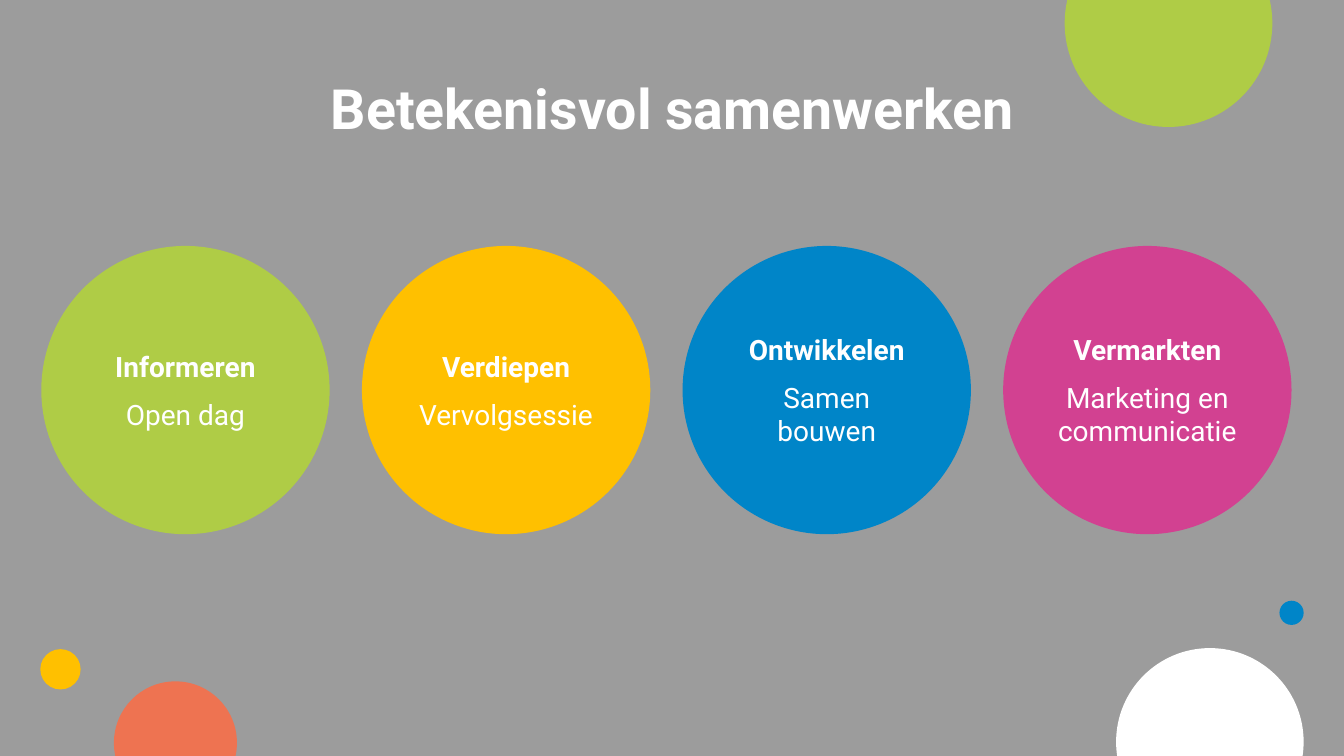
from math import asin, cos, pi, sin, tan

from lxml import etree
from pptx import Presentation
from pptx.dml.color import RGBColor
from pptx.enum.shapes import MSO_SHAPE
from pptx.enum.text import MSO_ANCHOR, PP_ALIGN
from pptx.oxml.ns import qn
from pptx.util import Inches, Pt

GREY = RGBColor(0x9C, 0x9C, 0x9C)
WHITE = RGBColor(0xFF, 0xFF, 0xFF)
GREEN = RGBColor(0xAF, 0xCC, 0x46)
YELLOW = RGBColor(0xFF, 0xC0, 0x00)
BLUE = RGBColor(0x00, 0x85, 0xC8)
PINK = RGBColor(0xD2, 0x41, 0x91)
ORANGE = RGBColor(0xEE, 0x73, 0x51)

WIDTH, HEIGHT = 13.33, 7.5
TITLE = "Betekenisvol samenwerken"
STEPS = [
    ("Informeren", "Open dag", GREEN),
    ("Verdiepen", "Vervolgsessie", YELLOW),
    ("Ontwikkelen", "Samen bouwen", BLUE),
    ("Vermarkten", "Marketing en communicatie", PINK),
]
STEP_LEFT, STEP_TOP, STEP_SIZE, STEP_PITCH = 0.41, 2.44, 2.86, 3.18
# left, top, diameter, colour
DOTS = [(0.4, 6.44, 0.4, YELLOW), (12.69, 5.96, 0.24, BLUE)]
# centre x, centre y, radius, slide edge that cuts the circle, colour
CUT_CIRCLES = [
    (12, 7.36, 0.93, HEIGHT, WHITE),
    (1.74, 7.37, 0.61, HEIGHT, ORANGE),
    (11.59, 0.23, 1.03, 0, GREEN),
]


def paint(shape, color):
    shape.fill.solid()
    shape.fill.fore_color.rgb = color
    shape.line.fill.background()
    shape.shadow.inherit = False


def add_circle(s, left, top, size, color):
    circle = s.shapes.add_shape(MSO_SHAPE.OVAL, Inches(left), Inches(top),
                                Inches(size), Inches(size))
    paint(circle, color)
    return circle


def lines_to_curves(shape):
    """Turn every three line segments of a freeform into one Bezier curve."""
    lines = list(shape.element.iter(qn("a:lnTo")))
    for i in range(0, len(lines) - 2, 3):
        curve = etree.Element(qn("a:cubicBezTo"))
        lines[i].addprevious(curve)
        for line in lines[i:i + 3]:
            curve.append(line[0])
            line.getparent().remove(line)


def add_cut_circle(s, cx, cy, radius, edge, color):
    """Draw the part of a circle that lies within the slide's top or bottom edge."""
    cut = abs(asin((edge - cy) / radius))
    base = 0 if edge == 0 else pi
    stops = [base + a for a in (-cut, 0, pi / 2, pi, pi + cut)]

    def point(angle, pull=0):
        """Point on the circle, moved along its tangent by pull radii."""
        return (Inches(cx + radius * (cos(angle) - pull * sin(angle))),
                Inches(cy + radius * (sin(angle) + pull * cos(angle))))

    points = []
    for a, b in zip(stops, stops[1:]):
        pull = 4 / 3 * tan((b - a) / 4)
        points += [point(a, pull), point(b, -pull), point(b)]
    builder = s.shapes.build_freeform(*point(stops[0]))
    builder.add_line_segments(points, close=True)
    shape = builder.convert_to_shape()
    lines_to_curves(shape)
    paint(shape, color)


def write(p, text, size=20, bold=False, before=0, spacing=1.0):
    p.alignment = PP_ALIGN.CENTER
    p.space_before = Pt(before)
    p.line_spacing = spacing
    r = p.add_run()
    r.text = text
    r.font.name = "Roboto"
    r.font.size = Pt(size)
    r.font.bold = bold
    r.font.color.rgb = WHITE


def main():
    prs = Presentation()
    prs.slide_width, prs.slide_height = Inches(WIDTH), Inches(HEIGHT)
    s = prs.slides.add_slide(prs.slide_layouts[6])
    s.background.fill.solid()
    s.background.fill.fore_color.rgb = GREY

    for cut_circle in CUT_CIRCLES:
        add_cut_circle(s, *cut_circle)
    for dot in DOTS:
        add_circle(s, *dot)

    title = s.shapes.add_textbox(Inches(1.84), Inches(0.76), Inches(9.66), Inches(0.69))
    tf = title.text_frame
    tf.word_wrap = True
    tf.vertical_anchor = MSO_ANCHOR.MIDDLE
    write(tf.paragraphs[0], TITLE, size=39.6, bold=True, spacing=0.9)

    for i, (name, detail, color) in enumerate(STEPS):
        step = add_circle(s, STEP_LEFT + i * STEP_PITCH, STEP_TOP, STEP_SIZE, color)
        tf = step.text_frame
        tf.word_wrap = True
        tf.vertical_anchor = MSO_ANCHOR.MIDDLE
        write(tf.paragraphs[0], name, bold=True)
        write(tf.add_paragraph(), detail, before=10)

    prs.save("out.pptx")


if __name__ == "__main__":
    main()
